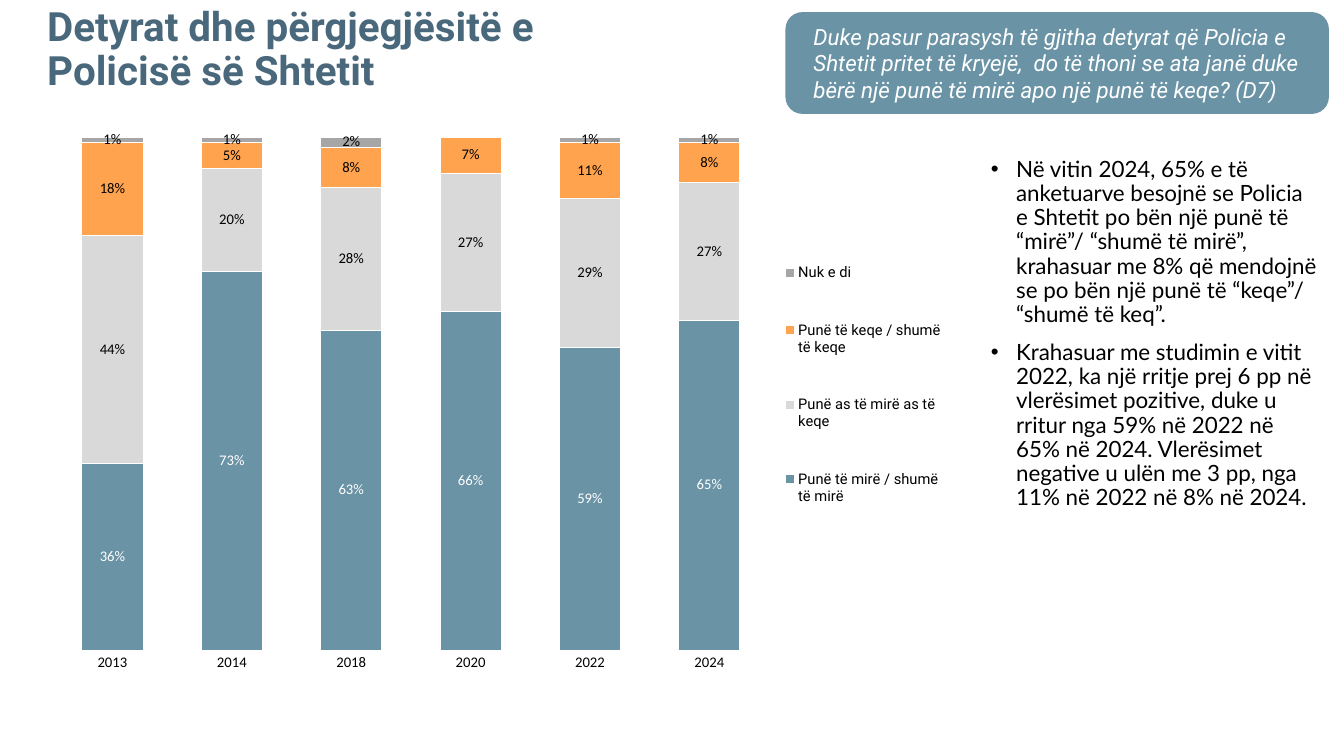
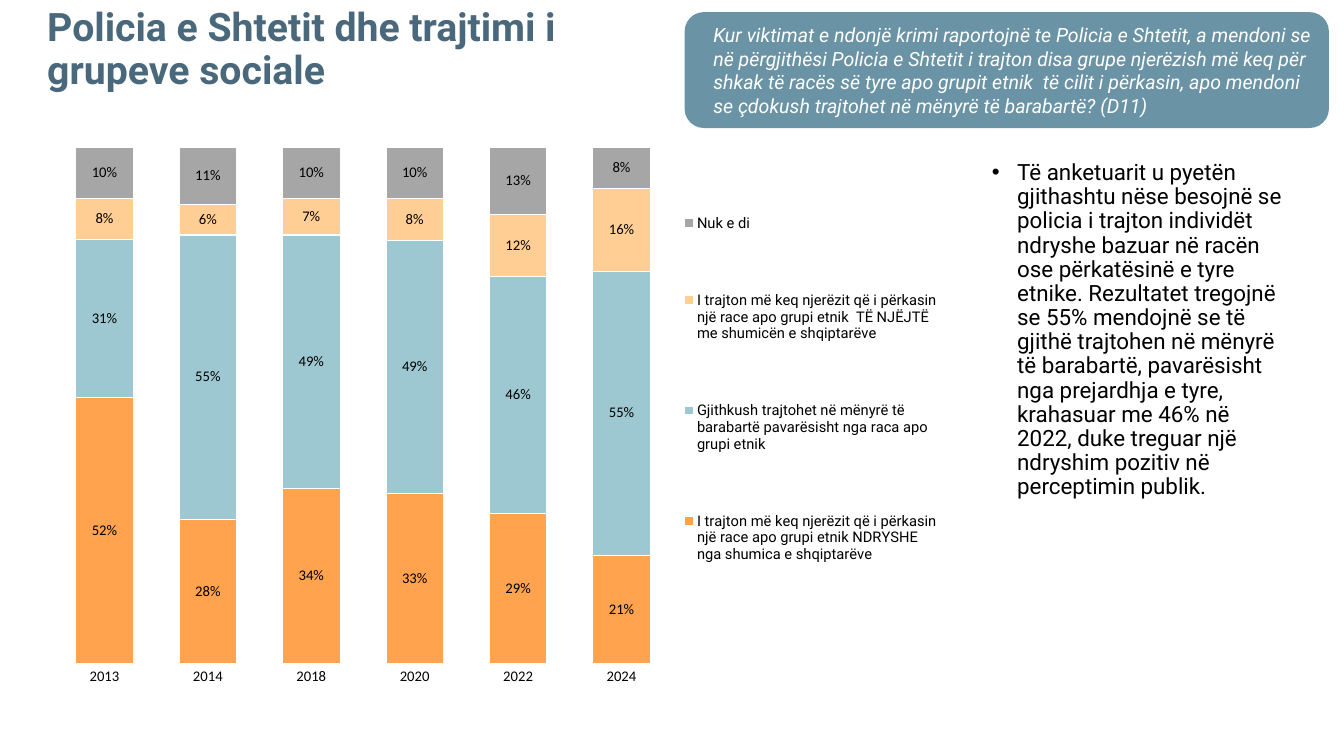
from lxml import etree
from pptx import Presentation, util as u
from pptx.chart.data import CategoryChartData
from pptx.dml.color import RGBColor
from pptx.enum import chart as chart_enum, shapes, text
from pptx.oxml.ns import qn

COLOURS = {
    "title": "49687C", "steel": "6A93A5", "sky": "9DC8D1",
    "orange": "FFA34E", "peach": "FFCE94", "light": "D9D9D9",
    "grey": "A6A6A6", "black": "000000", "white": "FFFFFF",
}
YEARS = ["2013", "2014", "2018", "2020", "2022", "2024"]
LEFT, RIGHT, CALLOUT_TOP = 0.37, 13.18, 0.12
CHART_WIDTH, CHART_HEIGHT = 9.05, 5.6

TITLE_FONT = {"name": "Roboto", "bold": True, "color": "title"}
CALLOUT_FONT = {"name": "Roboto", "italic": True, "color": "white"}
BODY_FONT = {"size": u.Pt(16), "color": "black"}
CHART_FONT = {"name": "Calibri", "size": u.Pt(10.5), "color": "black"}
LEGEND_FONT = CHART_FONT | {"name": "Roboto"}

# Series: name, fill, label colour, values
SLIDES = [
    {
        "title": "Detyrat dhe përgjegjësitë e Policisë së Shtetit",
        "title_width": 6.29, "title_size": 28.8,
        "question": "Duke pasur parasysh të gjitha detyrat që Policia e Shtetit pritet të kryejë,  "
                    "do të thoni se ata janë duke bërë një punë të mirë apo një punë të keqe? (D7)",
        "callout_left": 7.79, "callout_height": 1.01, "callout_size": 16,
        "body": [
            "Në vitin 2024, 65% e të anketuarve besojnë se Policia e Shtetit po bën një punë të "
            "“mirë”/ “shumë të mirë”, krahasuar me 8% që mendojnë se po bën një punë të “keqe”/ "
            "“shumë të keq”.",
            "Krahasuar me studimin e vitit 2022, ka një rritje prej 6 pp në vlerësimet pozitive, "
            "duke u rritur nga 59% në 2022 në 65% në 2024. Vlerësimet negative u ulën me 3 pp, "
            "nga 11% në 2022 në 8% në 2024.",
        ],
        "body_at": (9.73, 1.52, 3.45, 5.16), "body_font": "Lato",
        "chart_top": 1.21, "gap": 95,
        "plot": (0.017, 0.027, 0.785, 0.909), "legend": (0.815, 0.18, 0.18, 0.57),
        "series": [
            ("Punë të mirë / shumë të mirë", "steel", "white", (0.36, 0.73, 0.63, 0.66, 0.59, 0.65)),
            ("Punë as të mirë as të keqe", "light", "black", (0.44, 0.2, 0.28, 0.27, 0.29, 0.27)),
            ("Punë të keqe / shumë të keqe", "orange", "black", (0.18, 0.05, 0.08, 0.07, 0.11, 0.08)),
            ("Nuk e di", "grey", "black", (0.01, 0.01, 0.02, 0, 0.01, 0.01)),
        ],
    },
    {
        "title": "Policia e Shtetit dhe trajtimi i grupeve sociale",
        "title_width": 6.39, "title_size": 28,
        "question": "Kur viktimat e ndonjë krimi raportojnë te Policia e Shtetit, a mendoni se në "
                    "përgjithësi Policia e Shtetit i trajton disa grupe njerëzish më keq për shkak të "
                    "racës së tyre apo grupit etnik  të cilit i përkasin, apo mendoni se çdokush "
                    "trajtohet në mënyrë të barabartë? (D11)",
        "callout_left": 6.79, "callout_height": 1.15, "callout_size": 14,
        "body": [
            "Të anketuarit u pyetën gjithashtu nëse besojnë se policia i trajton individët ndryshe "
            "bazuar në racën ose përkatësinë e tyre etnike. Rezultatet tregojnë se 55% mendojnë se "
            "të gjithë trajtohen në mënyrë të barabartë, pavarësisht nga prejardhja e tyre, "
            "krahasuar me 46% në 2022, duke treguar një ndryshim pozitiv në perceptimin publik.",
        ],
        "body_at": (9.74, 1.55, 3.09, 5.61), "body_font": "Roboto",
        "chart_top": 1.31, "gap": 80,
        "plot": (0.017, 0.027, 0.68, 0.915), "legend": (0.705, 0.04, 0.285, 0.83),
        "series": [
            ("I trajton më keq njerëzit që i përkasin një race apo grupi etnik NDRYSHE nga shumica "
             "e shqiptarëve", "orange", "black", (0.52, 0.28, 0.34, 0.33, 0.29, 0.21)),
            ("Gjithkush trajtohet në mënyrë të barabartë pavarësisht nga raca apo grupi etnik",
             "sky", "black", (0.31, 0.55, 0.49, 0.49, 0.46, 0.55)),
            ("I trajton më keq njerëzit që i përkasin një race apo grupi etnik  TË NJËJTË me "
             "shumicën e shqiptarëve", "peach", "black", (0.08, 0.06, 0.07, 0.08, 0.12, 0.16)),
            ("Nuk e di", "grey", "black", (0.1, 0.11, 0.1, 0.1, 0.13, 0.08)),
        ],
    },
]


def style_font(font, values):
    for name, value in values.items():
        if name == "color":
            font.color.rgb = RGBColor.from_string(COLOURS[value])
        else:
            setattr(font, name, value)


def chart_layout(box, inner=False):
    """Build a c:layout element from x, y, w, h as fractions of the chart."""
    layout = etree.Element(qn("c:layout"))
    manual = etree.SubElement(layout, qn("c:manualLayout"))
    settings = [("layoutTarget", "inner")] if inner else []
    settings += [("xMode", "edge"), ("yMode", "edge"), *zip("xywh", box)]
    for tag, value in settings:
        etree.SubElement(manual, qn(f"c:{tag}")).set("val", str(value))
    return layout


presentation = Presentation()
presentation.slide_width, presentation.slide_height = u.Inches(13.33), u.Inches(7.5)

for content in SLIDES:
    slide = presentation.slides.add_slide(presentation.slide_layouts[6])

    # Title
    title = slide.shapes.add_textbox(
        u.Inches(LEFT), u.Inches(0.11), u.Inches(content["title_width"]), u.Inches(0.78))
    frame = title.text_frame
    frame.word_wrap = True
    frame.vertical_anchor = text.MSO_ANCHOR.MIDDLE
    paragraph = frame.paragraphs[0]
    paragraph.text = content["title"]
    paragraph.line_spacing = 0.9
    style_font(paragraph.font, TITLE_FONT | {"size": u.Pt(content["title_size"])})

    # Bulleted findings
    body = slide.shapes.add_textbox(*map(u.Inches, content["body_at"]))
    frame = body.text_frame
    frame.word_wrap = True
    for index, finding in enumerate(content["body"]):
        paragraph = frame.add_paragraph() if index else frame.paragraphs[0]
        paragraph.text = finding
        paragraph.line_spacing = 0.9
        if index:
            paragraph.space_before = u.Pt(10)
        properties = paragraph._p.get_or_add_pPr()
        properties.set("marL", str(u.Inches(0.25)))
        properties.set("indent", str(-u.Inches(0.25)))
        etree.SubElement(properties, qn("a:buFont")).set("typeface", "Arial")
        etree.SubElement(properties, qn("a:buChar")).set("char", "•")
        style_font(paragraph.font, BODY_FONT | {"name": content["body_font"]})

    # Survey question
    callout = slide.shapes.add_shape(
        shapes.MSO_SHAPE.ROUNDED_RECTANGLE,
        u.Inches(content["callout_left"]), u.Inches(CALLOUT_TOP),
        u.Inches(RIGHT - content["callout_left"]), u.Inches(content["callout_height"]))
    callout.shadow.inherit = False
    callout.fill.solid()
    callout.fill.fore_color.rgb = RGBColor.from_string(COLOURS["steel"])
    callout.line.fill.background()
    frame = callout.text_frame
    frame.word_wrap = True
    frame.vertical_anchor = text.MSO_ANCHOR.MIDDLE
    paragraph = frame.paragraphs[0]
    paragraph.text = content["question"]
    paragraph.alignment = text.PP_ALIGN.LEFT
    paragraph._p.get_or_add_pPr().set("marL", str(u.Inches(0.13)))
    style_font(paragraph.font, CALLOUT_FONT | {"size": u.Pt(content["callout_size"])})

    # Answers by year
    data = CategoryChartData(number_format="0%")
    data.categories = YEARS
    for name, _, _, values in content["series"]:
        data.add_series(name, values)
    chart = slide.shapes.add_chart(
        chart_enum.XL_CHART_TYPE.COLUMN_STACKED_100, u.Inches(LEFT), u.Inches(content["chart_top"]),
        u.Inches(CHART_WIDTH), u.Inches(CHART_HEIGHT), data).chart
    chart.has_title = False
    style_font(chart.font, CHART_FONT)

    plot = chart.plots[0]
    plot.gap_width, plot.overlap, plot.vary_by_categories = content["gap"], 100, False
    for series, (_, fill, label_colour, _) in zip(plot.series, content["series"]):
        series.format.fill.solid()
        series.format.fill.fore_color.rgb = RGBColor.from_string(COLOURS[fill])
        series.format.line.color.rgb = RGBColor.from_string(COLOURS["white"])
        series.format.line.width = u.Pt(0.75)
        labels = series.data_labels
        labels.show_value = True
        labels.number_format, labels.number_format_is_linked = "0%;;", False  # zero stays blank
        style_font(labels.font, CHART_FONT | {"color": label_colour})

    chart.value_axis.visible = False
    chart.value_axis.has_major_gridlines = False
    category_axis = chart.category_axis
    category_axis.major_tick_mark = chart_enum.XL_TICK_MARK.NONE
    category_axis.format.line.fill.background()
    style_font(category_axis.tick_labels.font, CHART_FONT)

    chart.has_legend = True
    legend = chart.legend
    legend.position = chart_enum.XL_LEGEND_POSITION.RIGHT
    legend.include_in_layout = False
    style_font(legend.font, LEGEND_FONT)

    plot_area = chart._chartSpace.chart.plotArea
    for parent in (plot_area, legend._element):
        for old_layout in parent.findall(qn("c:layout")):
            parent.remove(old_layout)
    plot_area.insert(0, chart_layout(content["plot"], inner=True))
    legend._element.find(qn("c:legendPos")).addnext(chart_layout(content["legend"]))

presentation.save("out.pptx")
